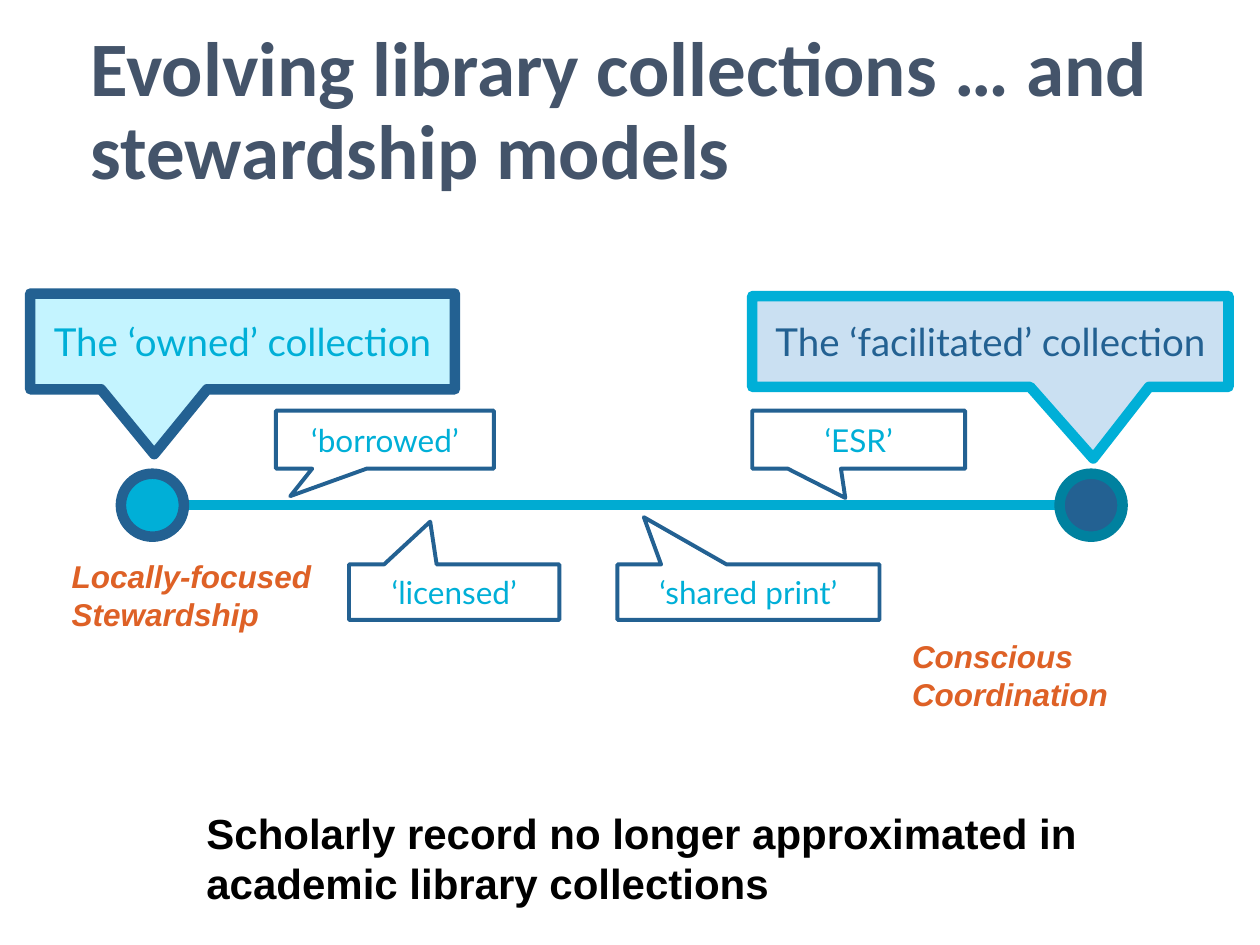
"""Build a slide on evolving library collections and stewardship models."""
from dataclasses import dataclass

from lxml import etree
from pptx import Presentation
from pptx import util as u
from pptx.dml.color import RGBColor
from pptx.enum import shapes, text
from pptx.oxml.ns import qn

NAVY, CYAN, WHITE, ORANGE = "236192", "00AFD7", "FFFFFF", "DE6126"
AXIS_Y = 4.01
DOT_SIZE = 0.5


@dataclass
class Callout:
    label: str
    box: tuple[float, float, float, float]
    tip: tuple[float, float]
    fill: str = WHITE
    line: str = NAVY
    color: str = CYAN
    weight: float = 2.25
    size: float = 18


@dataclass
class Endpoint:
    left: float
    fill: str
    line: str


@dataclass
class Caption:
    lines: list[str]
    box: tuple[float, float, float, float]
    style: dict


STEWARDSHIP = dict(size=18, color=ORANGE, bold=True, italic=True)
CALLOUTS = [
    Callout("The ‘owned’ collection", (0.24, 2.33, 3.37, 0.76), (-0.208, 1.178),
            fill="C4F4FF", weight=6, size=22),
    Callout("The ‘facilitated’ collection", (5.97, 2.35, 3.78, 0.72), (0.216, 1.29),
            fill="CAE0F2", line=CYAN, color=NAVY, weight=6, size=22),
    Callout("‘borrowed’", (2.19, 3.26, 1.73, 0.46), (-0.434, 0.975)),
    Callout("‘licensed’", (2.77, 4.48, 1.67, 0.44), (-0.114, -1.272)),
    Callout("‘ESR’", (5.97, 3.26, 1.69, 0.46), (-0.063, 1.006)),
    Callout("‘shared print’", (4.9, 4.48, 2.08, 0.44), (-0.399, -1.352)),
]
ENDPOINTS = [Endpoint(8.41, NAVY, "00819F"), Endpoint(0.96, CYAN, NAVY)]
CAPTIONS = [
    Caption(["Conscious", "Coordination"], (7.14, 5.01, 1.77, 0.71), STEWARDSHIP),
    Caption(["Locally-focused", "Stewardship"], (0.47, 4.37, 2.15, 0.71), STEWARDSHIP),
    Caption(["Scholarly record no longer approximated in", "academic library collections"],
            (1.54, 6.36, 7.17, 0.91), dict(size=24, color="000000", bold=True)),
]


def rgb(value: str) -> RGBColor:
    """Turn a hex string into a colour."""
    return RGBColor.from_string(value)


def write(shape, lines: list[str], *, size: float, color: str, font: str = "Arial",
          bold: bool = False, italic: bool = False, align=text.PP_ALIGN.LEFT,
          anchor=text.MSO_ANCHOR.TOP, wrap: bool = True, spacing: float = 1.0) -> None:
    """Write one formatted paragraph for each line."""
    frame = shape.text_frame
    frame.word_wrap = wrap
    frame.vertical_anchor = anchor
    frame.text = "\n".join(lines)
    for paragraph in frame.paragraphs:
        paragraph.alignment = align
        paragraph.line_spacing = spacing
        for run in paragraph.runs:
            run.font.name = font
            run.font.size = u.Pt(size)
            run.font.bold = bold
            run.font.italic = italic
            run.font.color.rgb = rgb(color)


def add_filled(slide, kind, box: tuple, fill: str, line: str, weight: float):
    """Add a filled and outlined preset shape."""
    shape = slide.shapes.add_shape(kind, *map(u.Inches, box))
    shape.shadow.inherit = False
    shape.fill.solid()
    shape.fill.fore_color.rgb = rgb(fill)
    shape.line.color.rgb = rgb(line)
    shape.line.width = u.Pt(weight)
    return shape


def add_callout(slide, callout: Callout) -> None:
    """Add a labelled callout with its pointer tip."""
    shape = add_filled(slide, shapes.MSO_SHAPE.RECTANGULAR_CALLOUT, callout.box,
                       callout.fill, callout.line, callout.weight)
    shape.adjustments[0], shape.adjustments[1] = callout.tip
    write(shape, [callout.label], size=callout.size, color=callout.color, font="Lato",
          align=text.PP_ALIGN.CENTER, anchor=text.MSO_ANCHOR.MIDDLE)


def add_endpoint(slide, endpoint: Endpoint) -> None:
    """Add a dot centred on the axis."""
    box = (endpoint.left, AXIS_Y - DOT_SIZE / 2, DOT_SIZE, DOT_SIZE)
    add_filled(slide, shapes.MSO_SHAPE.OVAL, box, endpoint.fill, endpoint.line, 6)


def add_axis(slide, start: float, end: float) -> None:
    """Add the horizontal axis."""
    axis = slide.shapes.add_connector(shapes.MSO_CONNECTOR.STRAIGHT, u.Inches(start),
                                      u.Inches(AXIS_Y), u.Inches(end), u.Inches(AXIS_Y))
    axis.line.color.rgb = rgb("00ABD2")
    axis.line.width = u.Pt(6)
    etree.SubElement(axis.element.spPr, qn("a:effectLst"))


def add_text(slide, lines: list[str], box: tuple, **style) -> None:
    """Add a text box."""
    write(slide.shapes.add_textbox(*map(u.Inches, box)), lines, **style)


def main() -> None:
    """Build and save the slide."""
    presentation = Presentation()
    presentation.slide_width, presentation.slide_height = u.Inches(10), u.Inches(7.5)
    slide = presentation.slides.add_slide(presentation.slide_layouts[6])
    add_text(slide, ["Evolving library collections … and stewardship models"],
             (0.62, 0.17, 8.62, 1.45), size=44, color="44546A", font="Calibri",
             bold=True, anchor=text.MSO_ANCHOR.MIDDLE, spacing=0.9)
    add_axis(slide, 1.21, 8.55)
    for endpoint in ENDPOINTS:
        add_endpoint(slide, endpoint)
    for callout in CALLOUTS:
        add_callout(slide, callout)
    for caption in CAPTIONS:
        add_text(slide, caption.lines, caption.box, wrap=False, **caption.style)
    presentation.save("out.pptx")


if __name__ == "__main__":
    main()
